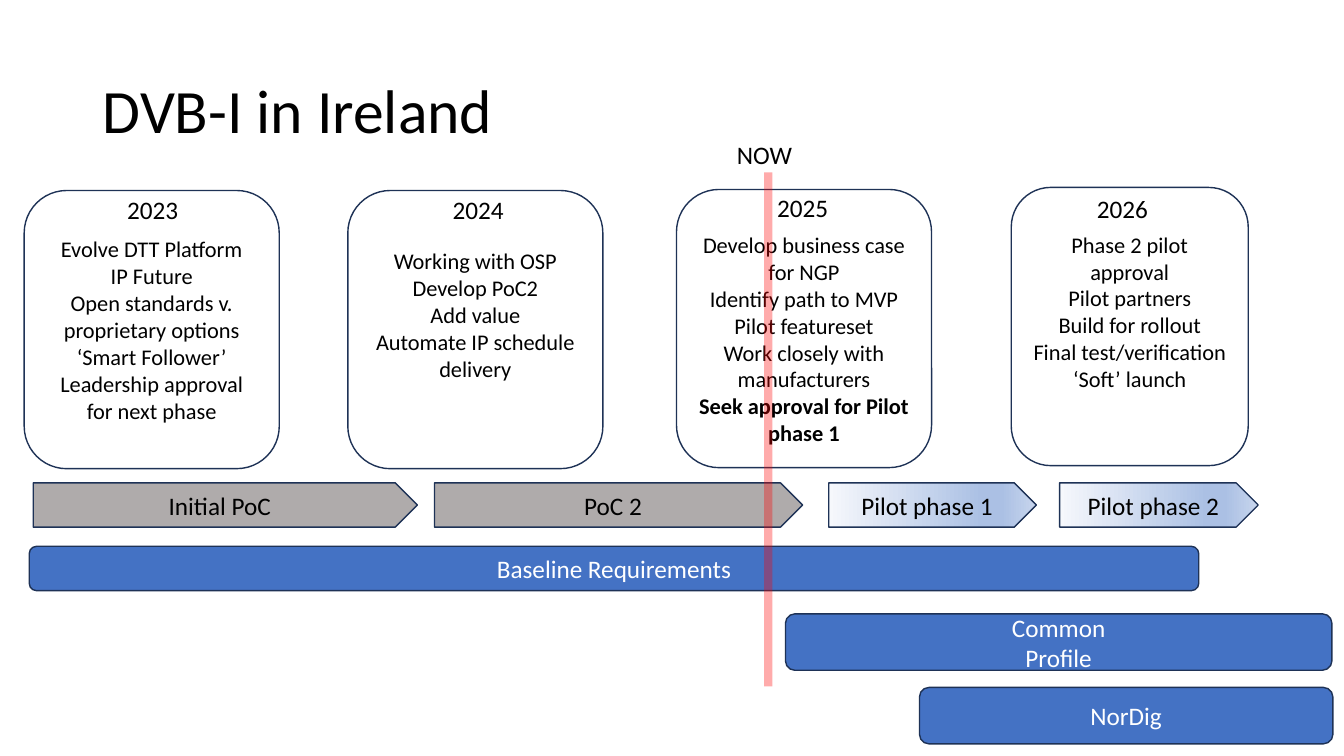
from lxml.etree import SubElement
from pptx import Presentation
from pptx.dml.color import RGBColor
from pptx.enum.shapes import MSO_CONNECTOR, MSO_SHAPE
from pptx.enum.text import MSO_ANCHOR, PP_ALIGN
from pptx.oxml.ns import qn
from pptx.util import Pt

SCALE = 9144
FONT = "Calibri"
COLOURS = {
    "black": "000000",
    "white": "FFFFFF",
    "outline": "1E3256",
    "done": "AFABAB",
    "bar": "4472C4",
    "now": "FF0000",
}
PILOT_STOPS = [(0, "F6F8FC"), (74, "ABC0E4"), (83, "ABC0E4"), (100, "C7D5ED")]

CARDS = [
    (24, 189, 253, 5, 5, [
        "Evolve DTT Platform", "IP Future",
        "Open standards v. proprietary options",
        "‘Smart Follower’", "Leadership approval for next phase"]),
    (345, 189, 253, 5, 35, [
        "Working with OSP", "Develop PoC2", "Add value",
        "Automate IP schedule delivery"]),
    (671, 188, 253, 25, 5, [
        "Develop business case for NGP", "Identify path to MVP",
        "Pilot featureset", "Work closely with manufacturers",
        "Seek approval for Pilot phase 1"]),
    (1003, 186, 235, 5, 35, [
        "Phase 2 pilot approval", "Pilot partners", "Build for rollout",
        "Final test/verification", "‘Soft’ launch"]),
]
BOLD_LINES = {"Seek approval for Pilot phase 1"}
PHASES = [
    (33, 381, "Initial PoC", False),
    (431, 365, "PoC 2", False),
    (822, 206, "Pilot phase 1", True),
    (1051, 197, "Pilot phase 2", True),
]
BARS = [
    (29, 542, 1160, 44, ["Baseline Requirements"]),
    (779, 609, 542, 56, ["Common", "Profile"]),
    (912, 682, 410, 56, ["NorDig"]),
]
CARD_YEARS = [(110, 188, "2023"), (439, 188, "2024"), (1078, 187, "2026")]
NOW_LABELS = [(721, 133, "NOW"), (761, 186, "2025")]


def px(value):
    return value * SCALE


def colour(name):
    return RGBColor.from_string(COLOURS[name])


def write(frame, lines, size, ink, align):
    for index, line in enumerate(lines):
        para = frame.paragraphs[0] if index == 0 else frame.add_paragraph()
        para.alignment = align
        span = para.add_run()
        span.text = line
        span.font.name = FONT
        span.font.size = Pt(size)
        span.font.bold = line in BOLD_LINES
        span.font.color.rgb = colour(ink)


def add_block(page, kind, place, fill, lines, size=18, ink="black"):
    block = page.shapes.add_shape(kind, *map(px, place))
    block.shadow.inherit = False
    if fill:
        block.fill.solid()
        block.fill.fore_color.rgb = colour(fill)
    block.line.color.rgb = colour("outline")
    block.line.width = Pt(1)
    block.text_frame.vertical_anchor = MSO_ANCHOR.MIDDLE
    write(block.text_frame, lines, size, ink, PP_ALIGN.CENTER)
    return block


def shade_pilot(block):
    block.fill.gradient()
    block.fill.gradient_angle = 0
    stops = block._element.spPr.find(qn("a:gradFill")).find(qn("a:gsLst"))
    for stop in list(stops):
        stops.remove(stop)
    for position, shade in PILOT_STOPS:
        stop = SubElement(stops, qn("a:gs"), pos=str(position * 1000))
        SubElement(stop, qn("a:srgbClr"), val=shade)


def add_card(page, left, top, width, inset_top, inset_bottom, lines):
    card = add_block(page, MSO_SHAPE.ROUNDED_RECTANGLE,
                     (left, top, width, 276), "white", lines, size=16)
    card.text_frame.margin_top = px(inset_top)
    card.text_frame.margin_bottom = px(inset_bottom)


def add_phase(page, left, width, name, pilot):
    phase = add_block(page, MSO_SHAPE.PENTAGON, (left, 479, width, 44),
                      None if pilot else "done", [name])
    if pilot:
        shade_pilot(phase)


def add_label(page, left, top, wording):
    box = page.shapes.add_textbox(px(left), px(top), px(75), px(40))
    box.text_frame.word_wrap = False
    if wording == "2023":
        box.left, box.width = px(65), px(173)
        box.text_frame.word_wrap = True
        write(box.text_frame, [wording], 18, "black", PP_ALIGN.CENTER)
    else:
        write(box.text_frame, [wording], 18, "black", PP_ALIGN.LEFT)


def add_now_line(page):
    marker = page.shapes.add_connector(
        MSO_CONNECTOR.STRAIGHT, px(762), px(171), px(762), px(681))
    marker.line.color.rgb = colour("now")
    marker.line.width = Pt(6)
    properties = marker._element.spPr
    tint = next(properties.iter(qn("a:srgbClr")))
    SubElement(tint, qn("a:alpha"), val="33000")
    SubElement(properties, qn("a:effectLst"))


def set_title(page, wording):
    title = page.shapes.title
    title.left, title.top, title.width, title.height = map(
        px, (92, 40, 1150, 145))
    title.text_frame.vertical_anchor = MSO_ANCHOR.MIDDLE
    write(title.text_frame, [wording], 44, "black", PP_ALIGN.LEFT)
    title.text_frame.paragraphs[0].line_spacing = 0.9


def main():
    deck = Presentation()
    deck.slide_width, deck.slide_height = px(1333), px(750)
    page = deck.slides.add_slide(deck.slide_layouts[5])
    set_title(page, "DVB-I in Ireland")
    for phase in PHASES:
        add_phase(page, *phase)
    for *place, lines in BARS:
        add_block(page, MSO_SHAPE.ROUNDED_RECTANGLE, place, "bar", lines,
                  ink="white")
    for card in CARDS:
        add_card(page, *card)
    for label in CARD_YEARS:
        add_label(page, *label)
    add_now_line(page)
    for label in NOW_LABELS:
        add_label(page, *label)
    deck.save("out.pptx")


if __name__ == "__main__":
    main()
